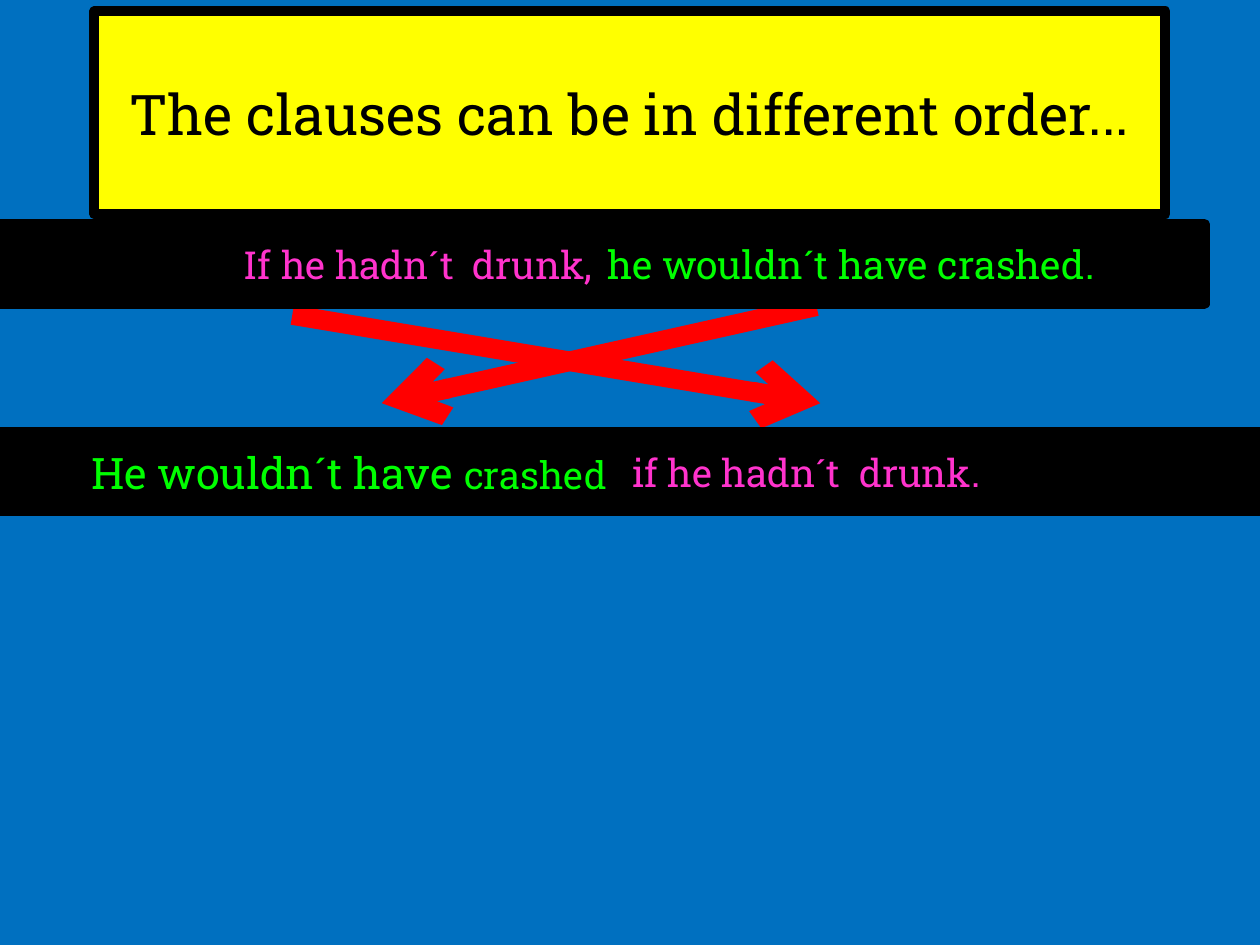
"""Build a slide showing that conditional clauses can swap order."""
from dataclasses import dataclass

import pptx
import pptx.dml.color
import pptx.enum.shapes
import pptx.enum.text
import pptx.oxml.ns
import pptx.util
from lxml import etree
from pptx.util import Inches

ALIGN = pptx.enum.text.PP_ALIGN


@dataclass(frozen=True)
class Theme:
    """Colours, font and type sizes of the slide."""
    font: str = "Roboto Slab"
    background: str = "0070C0"
    yellow: str = "FFFF00"
    black: str = "000000"
    condition: str = "FF33CC"
    result: str = "00FF00"
    arrow: str = "FF0000"
    border: float = 5.75
    arrow_width: float = 11.25
    title_size: float = 32
    condition_size: float = 22
    result_size: float = 22.4
    large_size: float = 24.8
    small_size: float = 21.7


THEME = Theme()


def rgb(value):
    """Return a colour from its hex value."""
    return pptx.dml.color.RGBColor.from_string(value)


def add_box(page, place, fill, spans, colour, align):
    """Add a bordered box holding one line of (text, size) spans."""
    box = page.shapes.add_shape(
        pptx.enum.shapes.MSO_SHAPE.RECTANGLE, *map(Inches, place))
    box.shadow.inherit = False
    box.fill.solid()
    box.fill.fore_color.rgb = rgb(fill)
    box.line.color.rgb = rgb(THEME.black)
    box.line.width = pptx.util.Pt(THEME.border)
    frame = box.text_frame
    frame.word_wrap = True
    frame.vertical_anchor = pptx.enum.text.MSO_ANCHOR.MIDDLE
    para = frame.paragraphs[0]
    para.alignment = align
    for text, size in spans:
        span = para.add_run()
        span.text = text
        span.font.name = THEME.font
        span.font.size = pptx.util.Pt(size)
        span.font.color.rgb = rgb(colour)


def add_arrow(page, start, end):
    """Add a thick arrow between two points."""
    arrow = page.shapes.add_connector(
        pptx.enum.shapes.MSO_CONNECTOR.STRAIGHT, *map(Inches, start + end))
    arrow.line.color.rgb = rgb(THEME.arrow)
    arrow.line.width = pptx.util.Pt(THEME.arrow_width)
    qn = pptx.oxml.ns.qn
    etree.SubElement(arrow.line._get_or_add_ln(), qn("a:tailEnd"), type="arrow")
    etree.SubElement(arrow._element.spPr, qn("a:effectLst"))


def main():
    """Build and save the slide."""
    deck = pptx.Presentation()
    deck.slide_width, deck.slide_height = Inches(10), Inches(7.5)
    page = deck.slides.add_slide(deck.slide_layouts[6])
    page.background.fill.solid()
    page.background.fill.fore_color.rgb = rgb(THEME.background)

    add_box(page, (0.75, 0.09, 8.5, 1.61), THEME.yellow,
            [("The clauses can be in different order...", THEME.title_size)],
            THEME.black, ALIGN.CENTER)
    add_arrow(page, (2.32, 2.5), (6.51, 3.2))
    add_arrow(page, (6.48, 2.43), (3.03, 3.2))

    first_top, second_top, height = 1.78, 3.43, 0.63
    clauses = [
        (-0.28, first_top, 5.08, THEME.condition, ALIGN.RIGHT,
         [("If he hadn´t  drunk,", THEME.condition_size)]),
        (4.72, first_top, 4.84, THEME.result, ALIGN.LEFT,
         [("he wouldn´t have crashed.", THEME.result_size)]),
        (0, second_top, 5, THEME.result, ALIGN.RIGHT,
         [("He wouldn´t have ", THEME.large_size),
          ("crashed", THEME.small_size), (" ", THEME.large_size)]),
        (4.92, second_top, 5.08, THEME.condition, ALIGN.LEFT,
         [("if he hadn´t  drunk.", THEME.condition_size)]),
    ]
    for left, top, width, colour, align, spans in clauses:
        add_box(page, (left, top, width, height), THEME.black, spans, colour, align)

    deck.save("out.pptx")


if __name__ == "__main__":
    main()
